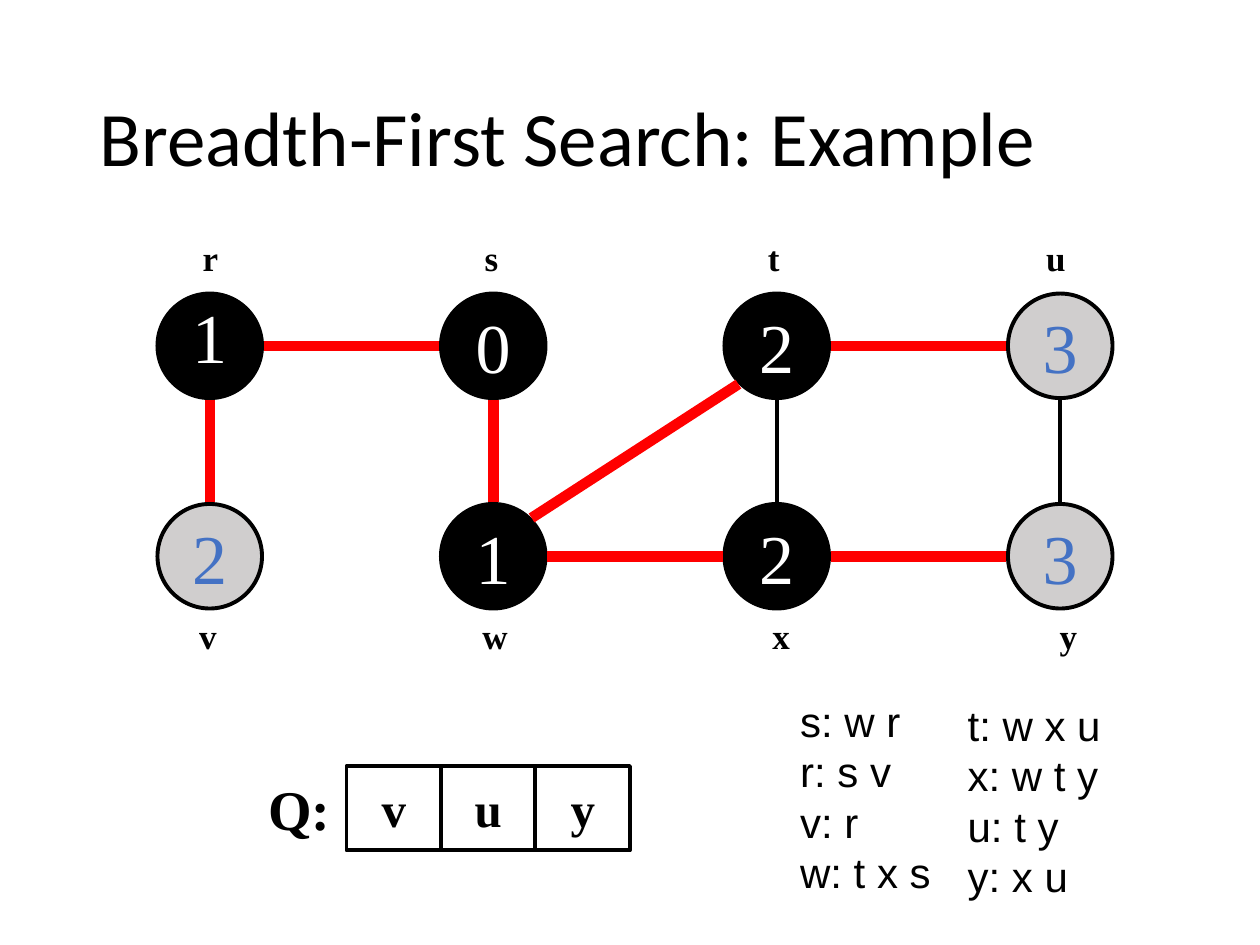
import math
from dataclasses import dataclass

import pptx
import pptx.dml.color
import pptx.enum.shapes
import pptx.enum.text
import pptx.oxml
import pptx.util
from pptx.util import Inches

HUES = {"ink": "000000", "white": "FFFFFF", "gray": "D0CECE",
        "blue": "4472C4", "red": "FF0000"}
SERIF = "Times New Roman"
SIZE = 0.83       # node diameter
REACH = 0.43      # from a node's centre to the end of an edge
LEFT, STEP = 1.25, 2.25
TOPS = (2.33, 4)
SHAPE = pptx.enum.shapes.MSO_SHAPE
ALIGN = pptx.enum.text.PP_ALIGN
ANCHOR = pptx.enum.text.MSO_ANCHOR


@dataclass
class Node:
    name: str
    dist: str
    col: int
    row: int
    mid: float            # centre of the name label
    done: bool = True     # black when finished, gray while queued
    space: float = 1.0

    @property
    def left(self) -> float:
        return LEFT + STEP * self.col

    @property
    def top(self) -> float:
        return TOPS[self.row]


@dataclass
class Edge:
    start: str
    end: str
    tree: bool = True


NODES = [
    Node("r", "1", 0, 0, 1.67, space=0.7),
    Node("v", "2", 0, 1, 1.65, done=False),
    Node("s", "0", 1, 0, 3.9),
    Node("w", "1", 1, 1, 3.93),
    Node("t", "2", 2, 0, 6.14),
    Node("x", "2", 2, 1, 6.2),
    Node("u", "3", 3, 0, 8.38, done=False),
    Node("y", "3", 3, 1, 8.48, done=False),
]
EDGES = [
    Edge("v", "r"), Edge("r", "s"), Edge("s", "w"), Edge("w", "t"),
    Edge("w", "x"), Edge("x", "t", tree=False), Edge("t", "u"),
    Edge("x", "y"), Edge("u", "y", tree=False),
]
QUEUE = ["v", "u", "y"]
LISTS = [
    (6.25, 5.47, 1.33, ["s: w r", "r: s v", "v: r", "w: t x s"]),
    (7.58, 5.5, 1.5, ["t: w x u", "x: w t y", "u: t y", "y: x u"]),
]


def color(key: str) -> pptx.dml.color.RGBColor:
    return pptx.dml.color.RGBColor.from_string(HUES[key])


def style(para, size: float, face: str, hue: str = "ink", bold: bool = False) -> None:
    font = para.font
    font.size, font.name, font.bold = pptx.util.Pt(size), face, bold
    font.color.rgb = color(hue)


def place(shape, left: float, top: float, width: float, height: float) -> None:
    shape.left, shape.top = Inches(left), Inches(top)
    shape.width, shape.height = Inches(width), Inches(height)


def write(shape, text: str, size: float, hue: str = "ink", bold: bool = False,
          anchor=ANCHOR.MIDDLE):
    """Put one centred, unwrapped line in a shape."""
    frame = shape.text_frame
    frame.word_wrap, frame.vertical_anchor = False, anchor
    para = frame.paragraphs[0]
    para.text, para.alignment = text, ALIGN.CENTER
    style(para, size, SERIF, hue, bold)
    return para


def add_box(slide, kind, left: float, top: float, width: float, height: float,
            fill: str = ""):
    box = slide.shapes.add_shape(kind, Inches(left), Inches(top),
                                 Inches(width), Inches(height))
    box.shadow.inherit = False
    if fill:
        box.fill.solid()
        box.fill.fore_color.rgb = color(fill)
    else:
        box.fill.background()
    box.line.color.rgb = color("ink")
    box.line.width = pptx.util.Pt(2.25)
    return box


def add_text(slide, text: str, left: float, top: float, width: float,
             height: float, size: float, anchor) -> None:
    box = slide.shapes.add_textbox(Inches(left), Inches(top),
                                   Inches(width), Inches(height))
    write(box, text, size, bold=True, anchor=anchor)


def draw_node(slide, node: Node) -> None:
    fill, hue = ("ink", "white") if node.done else ("gray", "blue")
    disc = add_box(slide, SHAPE.OVAL, node.left, node.top, SIZE, SIZE, fill)
    para = write(disc, node.dist, 40, hue)
    if node.space != 1:
        para.line_spacing = node.space


def draw_name(slide, node: Node) -> None:
    top = (1.83, 4.83)[node.row]
    add_text(slide, node.name, node.mid - 0.2, top, 0.4, 0.43, 20, ANCHOR.TOP)


def draw_edge(slide, a: Node, b: Node, tree: bool) -> None:
    # Edges leave a node at one of eight compass points
    dx = (b.col > a.col) - (b.col < a.col)
    dy = (b.row > a.row) - (b.row < a.row)
    span = REACH / math.hypot(dx, dy)
    half = SIZE / 2
    ends = [(n.left + half + way * dx * span, n.top + half + way * dy * span)
            for n, way in ((a, 1), (b, -1))]
    line = slide.shapes.add_connector(
        pptx.enum.shapes.MSO_CONNECTOR.STRAIGHT,
        *(Inches(v) for end in ends for v in end))
    line.line.color.rgb = color("red" if tree else "ink")
    line.line.width = pptx.util.Pt(6 if tree else 2.25)
    props = line._element.spPr
    props.append(pptx.oxml.parse_xml(
        '<a:effectLst xmlns:a="http://schemas.openxmlformats.org/drawingml/2006/main"/>'))


def fill_list(body, rows: list[str]) -> None:
    frame = body.text_frame
    frame.text = "\n".join(rows)
    frame.word_wrap = True
    frame.auto_size = pptx.enum.text.MSO_AUTO_SIZE.NONE
    for para in frame.paragraphs:
        style(para, 24, "Arial")
        para.space_before = pptx.util.Pt(0)
        props = para._p.get_or_add_pPr()
        props.set("marL", "0")
        props.set("indent", "0")
        props.insert_element_before(pptx.oxml.parse_xml(
            '<a:buNone xmlns:a="http://schemas.openxmlformats.org/drawingml/2006/main"/>'),
            "a:tabLst", "a:defRPr", "a:extLst")


def main() -> None:
    deck = pptx.Presentation()
    deck.slide_width, deck.slide_height = Inches(10), Inches(7.5)
    slide = deck.slides.add_slide(deck.slide_layouts[3])

    # Title
    title = slide.shapes.title
    place(title, 0.69, 0.4, 8.62, 1.45)
    title.text_frame.text = "Breadth-First Search: Example"
    title.text_frame.vertical_anchor = ANCHOR.MIDDLE
    head = title.text_frame.paragraphs[0]
    head.alignment, head.line_spacing = ALIGN.LEFT, 0.9
    style(head, 44, "Calibri")

    # Graph
    for node in NODES:
        draw_node(slide, node)
    for node in NODES:
        draw_name(slide, node)
    graph = {node.name: node for node in NODES}
    for edge in EDGES:
        draw_edge(slide, graph[edge.start], graph[edge.end], edge.tree)

    # Queue
    add_text(slide, "Q:", 2, 6.08, 0.75, 0.67, 32, ANCHOR.MIDDLE)
    for i, name in enumerate(QUEUE):
        cell = add_box(slide, SHAPE.RECTANGLE, 2.75 + 0.75 * i, 6.08, 0.75, 0.67)
        write(cell, name, 28, bold=True)

    # Adjacency lists
    for i, (left, top, width, rows) in enumerate(LISTS, start=1):
        body = slide.placeholders[i]
        place(body, left, top, width, 1.72)
        fill_list(body, rows)

    deck.save("out.pptx")


if __name__ == "__main__":
    main()
